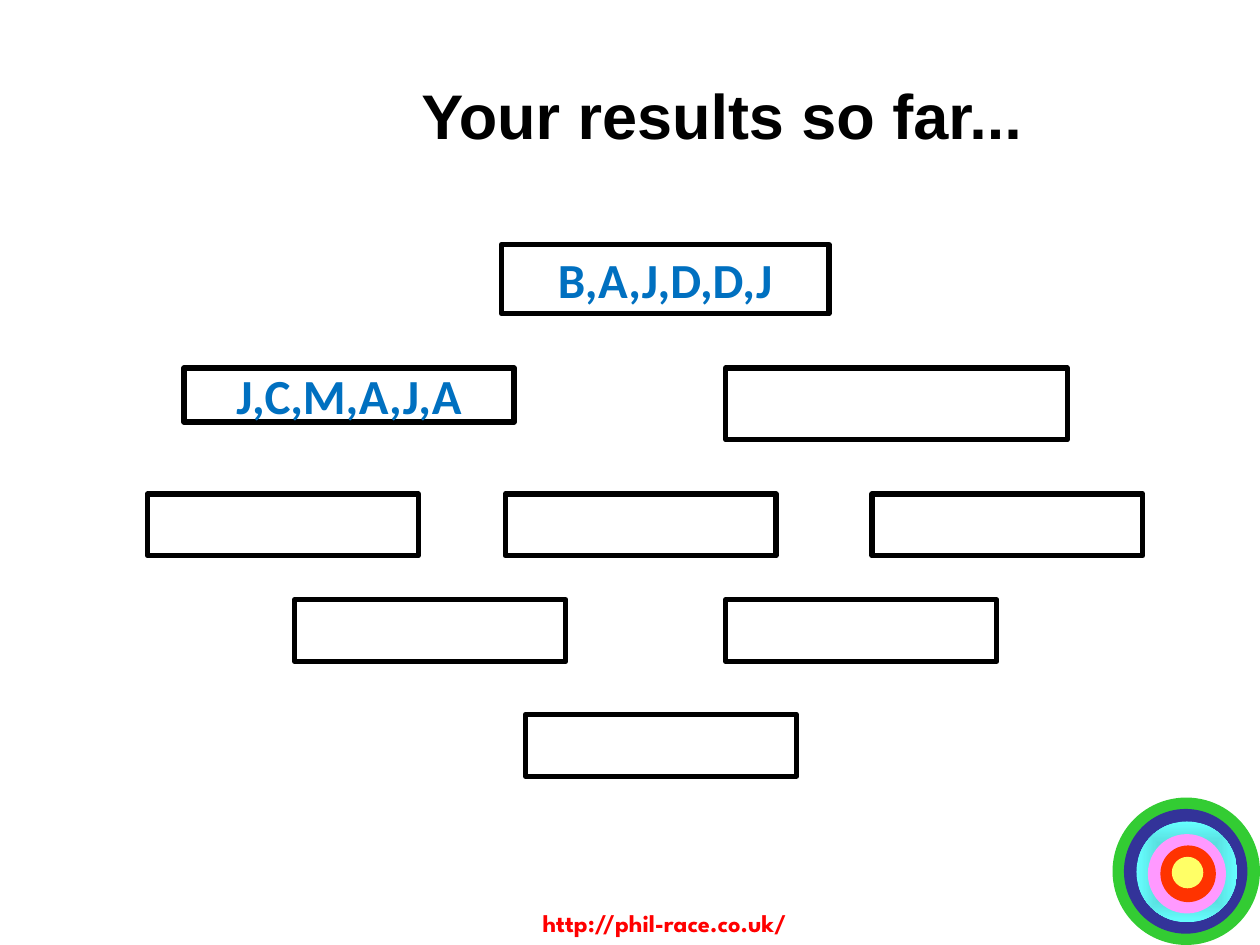
from dataclasses import dataclass

import lxml.etree
import pptx
import pptx.dml.color
import pptx.enum.shapes
import pptx.enum.text
import pptx.oxml.ns
import pptx.util

Inches = pptx.util.Inches
Pt = pptx.util.Pt
SHAPE = pptx.enum.shapes.MSO_SHAPE
CENTER = pptx.enum.text.PP_ALIGN.CENTER
MIDDLE = pptx.enum.text.MSO_ANCHOR.MIDDLE


def rgb(value):
    return pptx.dml.color.RGBColor.from_string(value)


@dataclass(frozen=True)
class Theme:
    ink: str = "000000"
    answer: str = "0070C0"
    link: str = "FF0000"
    paper: str = "FFFFFF"
    glow: tuple = ("47B2B2", "66FFFF")
    title_font: str = "Arial"
    answer_font: str = "Calibri"
    link_font: str = "League Spartan"
    title_size: int = 36
    answer_size: int = 28
    link_size: int = 14
    border: int = 3


class SlideBuilder:
    def __init__(self, prs, theme):
        self.theme = theme
        self.slide = prs.slides.add_slide(prs.slide_layouts[5])
        fill = self.slide.background.fill
        fill.solid()
        fill.fore_color.rgb = rgb(theme.paper)

    def set_text(self, tf, text, font, size, color):
        p = tf.paragraphs[0]
        p.text = text
        p.alignment = CENTER
        p.font.name = font
        p.font.size = Pt(size)
        p.font.bold = True
        p.font.color.rgb = rgb(color)
        return p

    def title(self, text, left, top, width, height):
        sp = self.slide.shapes.title
        sp.left, sp.top = Inches(left), Inches(top)
        sp.width, sp.height = Inches(width), Inches(height)
        tf = sp.text_frame
        tf.vertical_anchor = MIDDLE
        tf.auto_size = pptx.enum.text.MSO_AUTO_SIZE.NONE
        t = self.theme
        p = self.set_text(tf, text, t.title_font, t.title_size, t.ink)
        p.line_spacing = 0.75

    def footer(self, text, left, top, width, height):
        box = self.slide.shapes.add_textbox(
            Inches(left), Inches(top), Inches(width), Inches(height))
        tf = box.text_frame
        tf.word_wrap = True
        t = self.theme
        self.set_text(tf, text, t.link_font, t.link_size, t.link)

    def shape(self, kind, left, top, width, height):
        sp = self.slide.shapes.add_shape(
            kind, Inches(left), Inches(top), Inches(width), Inches(height))
        sp.shadow.inherit = False
        return sp

    def result_box(self, left, top, width, height, text=""):
        sp = self.shape(SHAPE.RECTANGLE, left, top, width, height)
        t = self.theme
        sp.fill.background()
        sp.line.color.rgb = rgb(t.ink)
        sp.line.width = Pt(t.border)
        if text:
            tf = sp.text_frame
            tf.word_wrap = False
            tf.vertical_anchor = MIDDLE
            self.set_text(tf, text, t.answer_font, t.answer_size, t.answer)

    def ring(self, left, top, width, height, color=None):
        """Draw one disc of the target; without a colour it gets the glow."""
        sp = self.shape(SHAPE.OVAL, left, top, width, height)
        sp.line.fill.background()
        if color:
            sp.fill.solid()
            sp.fill.fore_color.rgb = rgb(color)
        else:
            self.glow(sp)

    def glow(self, sp):
        """Fill with a gradient that runs from the centre to the outline."""
        sp.fill.gradient()
        for stop, color, position in zip(
                sp.fill.gradient_stops, self.theme.glow, (0, 1)):
            stop.color.rgb = rgb(color)
            stop.position = position
        qn = pptx.oxml.ns.qn
        grad = sp._element.spPr.find(qn("a:gradFill"))
        grad.remove(grad.find(qn("a:lin")))
        radial = lxml.etree.SubElement(grad, qn("a:path"), {"path": "shape"})
        lxml.etree.SubElement(
            radial, qn("a:fillToRect"), dict.fromkeys("ltrb", "50000"))


RINGS = [
    (8.83, 6.33, 1.17, 1.17, "33CC33"),
    (8.92, 6.42, 0.98, 0.99, "333399"),
    (9.02, 6.52, 0.8, 0.8),
    (9.11, 6.62, 0.62, 0.63, "FF99FF"),
    (9.21, 6.71, 0.44, 0.45, "FF3300"),
    (9.3, 6.8, 0.25, 0.25, "FFFF66"),
]
TOP_BOXES = [
    (3.98, 1.94, 2.6, 0.55, "B,A,J,D,D,J"),
    (1.46, 2.92, 2.62, 0.43, "J,C,M,A,J,A"),
    (5.76, 2.92, 2.71, 0.57),
]
SMALL_BOX = (2.15, 0.49)
SMALL_ROWS = {3.92: (1.17, 4.01, 6.92), 4.76: (2.34, 5.76), 5.67: (4.17,)}


def main():
    prs = pptx.Presentation()
    prs.slide_width, prs.slide_height = Inches(10), Inches(7.5)
    s = SlideBuilder(prs, Theme())
    for ring in RINGS:
        s.ring(*ring)
    s.footer("http://phil-race.co.uk/", 3.83, 7.16, 2.89, 0.34)
    s.title("Your results so far...", 1.46, 0.38, 8.54, 1.19)
    for box in TOP_BOXES:
        s.result_box(*box)
    for top, lefts in SMALL_ROWS.items():
        for left in lefts:
            s.result_box(left, top, *SMALL_BOX)
    prs.save("out.pptx")


if __name__ == "__main__":
    main()
